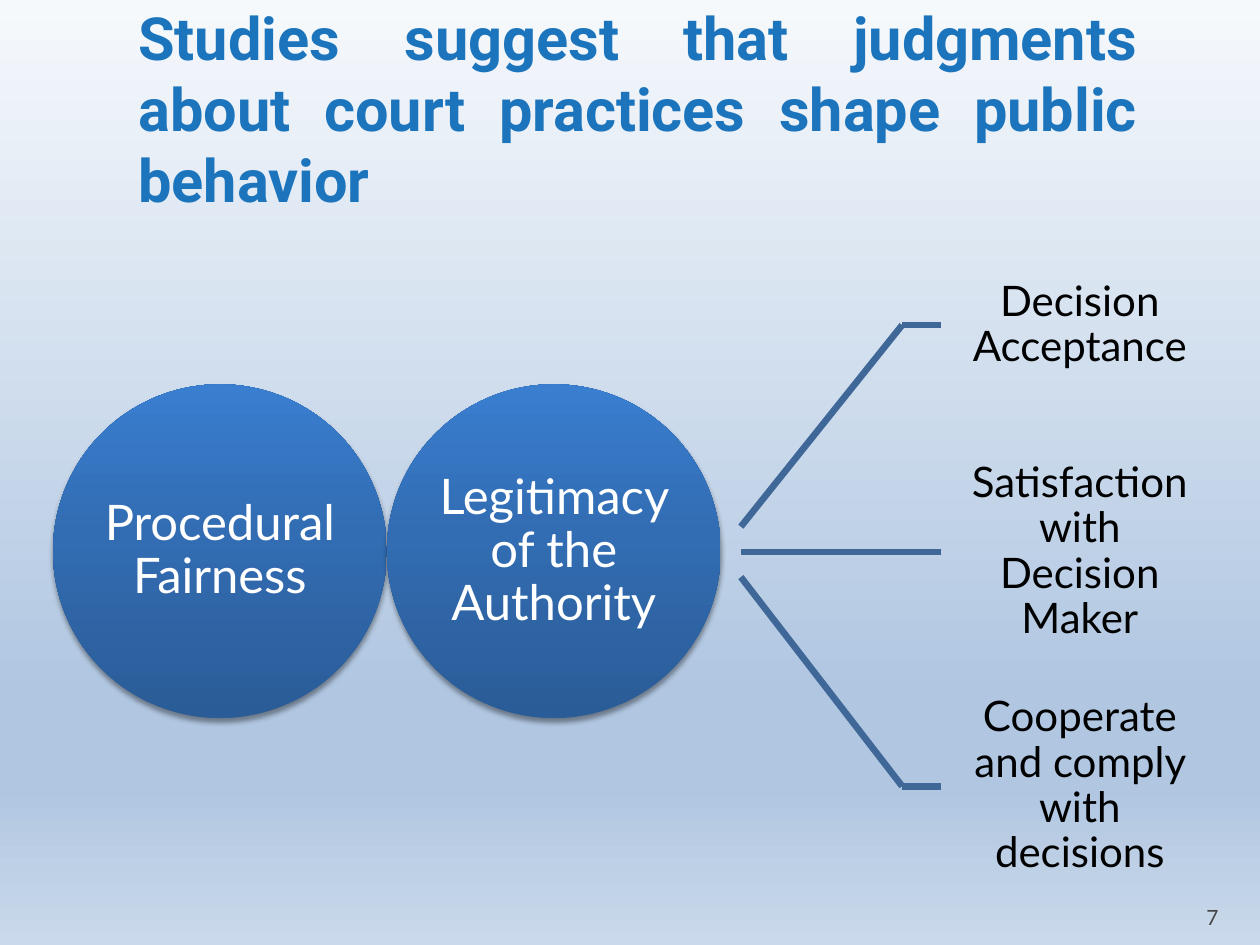
from lxml.etree import SubElement
from pptx import Presentation
from pptx.dml.color import RGBColor
from pptx.enum.shapes import MSO_CONNECTOR, MSO_SHAPE
from pptx.enum.text import MSO_ANCHOR, PP_ALIGN
from pptx.oxml.ns import qn
from pptx.util import Inches, Pt


def color(hex_string):
    return RGBColor.from_string(hex_string)


class SlideBuilder:
    body_font = "Lato"
    title_font = "Roboto"
    title_color = "1C75BC"
    line_color = "3F6797"
    line_width = 3.78
    background_stops = [(0, "F6F9FC"), (74, "B0C6E1"), (83, "B0C6E1"), (100, "CAD9EB")]
    circle_stops = [(0, "2A5C97"), (55, "326CB2"), (100, "3A7ED0")]

    def __init__(self, slide):
        self.slide = slide

    def gradient(self, fill, element, stops, angle):
        """Fill with any number of (percent, colour) stops; angle is counter-clockwise."""
        fill.gradient()
        fill.gradient_angle = angle
        stop_list = element.find(".//" + qn("a:gsLst"))
        for stop in list(stop_list):
            stop_list.remove(stop)
        for percent, hex_string in stops:
            stop = SubElement(stop_list, qn("a:gs"), pos=str(percent * 1000))
            SubElement(stop, qn("a:srgbClr"), val=hex_string)

    def background(self):
        self.gradient(self.slide.background.fill, self.slide.element, self.background_stops, 270)

    def set_text(self, shape, text, size, hex_string, insets=(0, 0, 0, 0), font=None, bold=False,
                 align=PP_ALIGN.CENTER, anchor=MSO_ANCHOR.MIDDLE, line_spacing=None):
        frame = shape.text_frame
        frame.word_wrap = True
        frame.vertical_anchor = anchor
        (frame.margin_left, frame.margin_top,
         frame.margin_right, frame.margin_bottom) = map(Inches, insets)
        paragraph = frame.paragraphs[0]
        paragraph.text = text
        paragraph.alignment = align
        paragraph.line_spacing = line_spacing
        paragraph.font.name = font or self.body_font
        paragraph.font.size = Pt(size)
        paragraph.font.bold = bold
        paragraph.font.color.rgb = color(hex_string)

    def text(self, left, top, width, height, *content, **style):
        box = self.slide.shapes.add_textbox(*map(Inches, (left, top, width, height)))
        self.set_text(box, *content, **style)
        return box

    def circle(self, left, top, diameter, text):
        shape = self.slide.shapes.add_shape(
            MSO_SHAPE.OVAL, *map(Inches, (left, top, diameter, diameter)))
        self.gradient(shape.fill, shape.element, self.circle_stops, 90)
        shape.line.fill.background()
        self.drop_shadow(shape)
        self.set_text(shape, text, 28, "FFFFFF", line_spacing=0.9)

    def drop_shadow(self, shape):
        shape.shadow.inherit = False
        effects = shape.element.spPr.find(qn("a:effectLst"))
        shadow = SubElement(effects, qn("a:outerShdw"), blurRad=str(Pt(3.1)), dist=str(Pt(2)),
                            dir="5400000", rotWithShape="0")
        shadow_color = SubElement(shadow, qn("a:srgbClr"), val="000000")
        SubElement(shadow_color, qn("a:alpha"), val="38000")

    def line(self, start_x, start_y, end_x, end_y):
        connector = self.slide.shapes.add_connector(
            MSO_CONNECTOR.STRAIGHT, *map(Inches, (start_x, start_y, end_x, end_y)))
        connector.line.color.rgb = color(self.line_color)
        connector.line.width = Pt(self.line_width)
        SubElement(connector.element.spPr, qn("a:effectLst"))
        return connector

    def outcome(self, text, start_y, center_y):
        """Draw a branch from the circles and the label it leads to."""
        start_x, bend_x, label_x, label_height = 5.88, 7.16, 7.47, 1.32
        self.line(start_x, start_y, bend_x, center_y)
        label = self.text(label_x, center_y - label_height / 2, 2.2, label_height,
                          text, 24, "000000", insets=[0.19] * 4, line_spacing=0.9)
        self.line(bend_x, center_y, label_x, center_y).end_connect(label, 1)


def main():
    presentation = Presentation()
    presentation.slide_width = Inches(10)
    presentation.slide_height = Inches(7.5)
    builder = SlideBuilder(presentation.slides.add_slide(presentation.slide_layouts[6]))

    builder.background()
    builder.text(1, 0.17, 8.08, 1.37,
                 "Studies suggest that judgments about court practices shape public behavior",
                 34, builder.title_color, insets=(0.1, 0.05, 0.05, 0.05),
                 font=builder.title_font, bold=True, align=PP_ALIGN.JUSTIFY)

    diameter = 2.65
    for index, cause in enumerate(["Procedural Fairness", "Legitimacy of the Authority"]):
        builder.circle(0.42 + index * diameter, 3.05, diameter, cause)

    for outcome, start_y, center_y in [
        ("Decision Acceptance", 4.18, 2.58),
        ("Satisfaction with Decision Maker", 4.38, 4.38),
        ("Cooperate and comply with decisions", 4.58, 6.24),
    ]:
        builder.outcome(outcome, start_y, center_y)

    builder.text(8.97, 7.08, 0.8, 0.3, "7", 12, "454545", insets=(0.1, 0.05, 0.1, 0),
                 align=PP_ALIGN.RIGHT, anchor=MSO_ANCHOR.BOTTOM)
    presentation.save("out.pptx")


if __name__ == "__main__":
    main()
